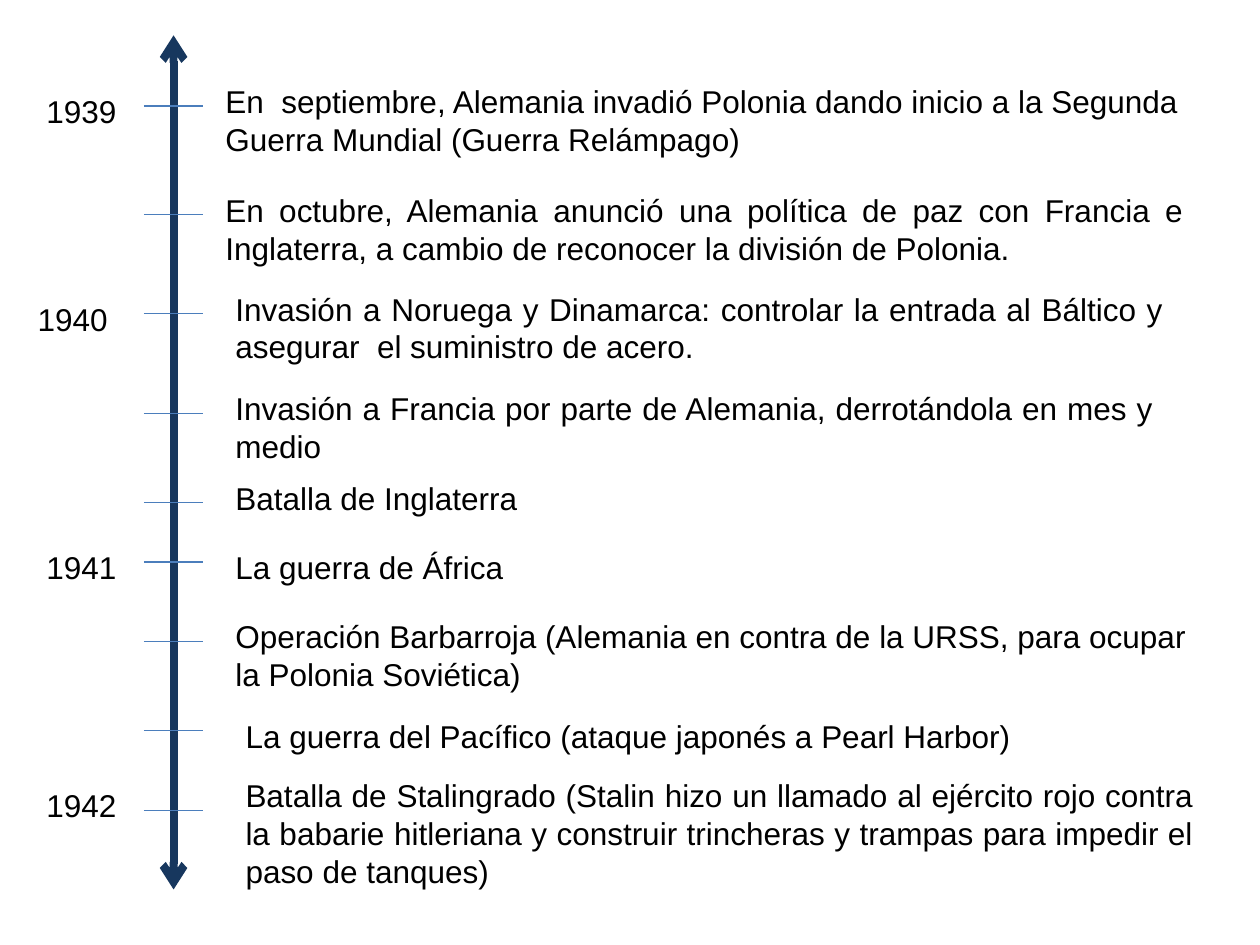
import pptx
import pptx.dml.color
import pptx.enum.shapes
import pptx.enum.text
import pptx.oxml
import pptx.oxml.ns
import pptx.util
from lxml import etree

Pt = pptx.util.Pt
NAVY = pptx.dml.color.RGBColor(0x17, 0x37, 0x5E)
BLUE = pptx.dml.color.RGBColor(0x4B, 0x7E, 0xBC)
BLACK = pptx.dml.color.RGBColor(0, 0, 0)
LEFT = pptx.enum.text.PP_ALIGN.LEFT
JUSTIFY = pptx.enum.text.PP_ALIGN.JUSTIFY

LINE_HEIGHT = 21.8
PADDING = 7.2
TICK_LENGTH = 34

# Tick height, then text left, top, width, line count, alignment and wording
EVENTS = [
    (60.5, 121.7, 43.2, 572.4, 2, LEFT,
     "En  septiembre, Alemania invadió Polonia dando inicio a la Segunda "
     "Guerra Mundial (Guerra Relámpago)"),
    (122.4, 121.7, 105.8, 561.6, 2, JUSTIFY,
     "En octubre, Alemania anunció una política de paz con Francia e "
     "Inglaterra, a cambio de reconocer la división de Polonia."),
    (179.3, 127.4, 162, 544.3, 2, JUSTIFY,
     "Invasión a Noruega y Dinamarca: controlar la entrada al Báltico y "
     "asegurar  el suministro de acero."),
    (236.2, 127.4, 218.9, 538.6, 2, JUSTIFY,
     "Invasión a Francia por parte de Alemania, derrotándola en mes y medio"),
    (287.3, 127.4, 270, 527, 1, LEFT, "Batalla de Inglaterra"),
    (321.1, 127.4, 309.6, 538.6, 1, LEFT, "La guerra de África"),
    (366.5, 127.4, 349.2, 567.4, 2, LEFT,
     "Operación Barbarroja (Alemania en contra de la URSS, para ocupar "
     "la Polonia Soviética)"),
    (417.6, 133.2, 406.1, 550, 1, LEFT,
     "La guerra del Pacífico (ataque japonés a Pearl Harbor)"),
    (463, 133.2, 439.9, 555.8, 3, JUSTIFY,
     "Batalla de Stalingrado (Stalin hizo un llamado al ejército rojo contra "
     "la babarie hitleriana y construir trincheras y trampas para impedir el "
     "paso de tanques)"),
]

# Year, left, top
YEARS = [("1939", 19.4, 49), ("1940", 14.4, 167.8),
         ("1941", 19.4, 309.6), ("1942", 19.4, 445.7)]


def add_line(slide, start, end, color, width):
    line = slide.shapes.add_connector(
        pptx.enum.shapes.MSO_CONNECTOR.STRAIGHT,
        Pt(start[0]), Pt(start[1]), Pt(end[0]), Pt(end[1]))
    line.line.color.rgb = color
    line.line.width = Pt(width)
    etree.SubElement(line._element.spPr, pptx.oxml.ns.qn("a:effectLst"))
    return line


def add_label(slide, left, top, width, text, line_count=1, alignment=LEFT):
    height = line_count * LINE_HEIGHT + PADDING
    label = slide.shapes.add_textbox(Pt(left), Pt(top), Pt(width), Pt(height))
    label.text_frame.word_wrap = True
    label.text_frame.auto_size = pptx.enum.text.MSO_AUTO_SIZE.SHAPE_TO_FIT_TEXT
    label.text_frame.text = text
    paragraph = label.text_frame.paragraphs[0]
    paragraph.alignment = alignment
    font = paragraph.runs[0].font
    font.name = "Arial"
    font.size = Pt(18)
    font.color.rgb = BLACK


def add_axis(slide, center, top, height):
    """Vertical axis with arrowheads at both ends, and a tick for each event."""
    axis = add_line(slide, (center, top), (center, top + height), NAVY, 4.5)
    for end in ("a:headEnd", "a:tailEnd"):
        etree.SubElement(axis.line._ln, pptx.oxml.ns.qn(end), type="arrow")
    for tick, *_ in EVENTS:
        add_line(slide, (center - TICK_LENGTH / 2, tick),
                 (center + TICK_LENGTH / 2, tick), BLUE, 0.75)


def add_years(slide, width):
    for year, left, top in YEARS:
        add_label(slide, left, top, width, year)


def add_events(slide):
    for _, left, top, width, line_count, alignment, text in EVENTS:
        add_label(slide, left, top, width, text, line_count, alignment)


def main():
    presentation = pptx.Presentation()
    presentation.slide_width = Pt(720)
    presentation.slide_height = Pt(540)
    blank_layout = presentation.slide_layouts[6]
    slide = presentation.slides.add_slide(blank_layout)
    add_axis(slide, center=99.2, top=20.2, height=488.1)
    add_years(slide, width=70.6)
    add_events(slide)
    presentation.save("out.pptx")


if __name__ == "__main__":
    main()
